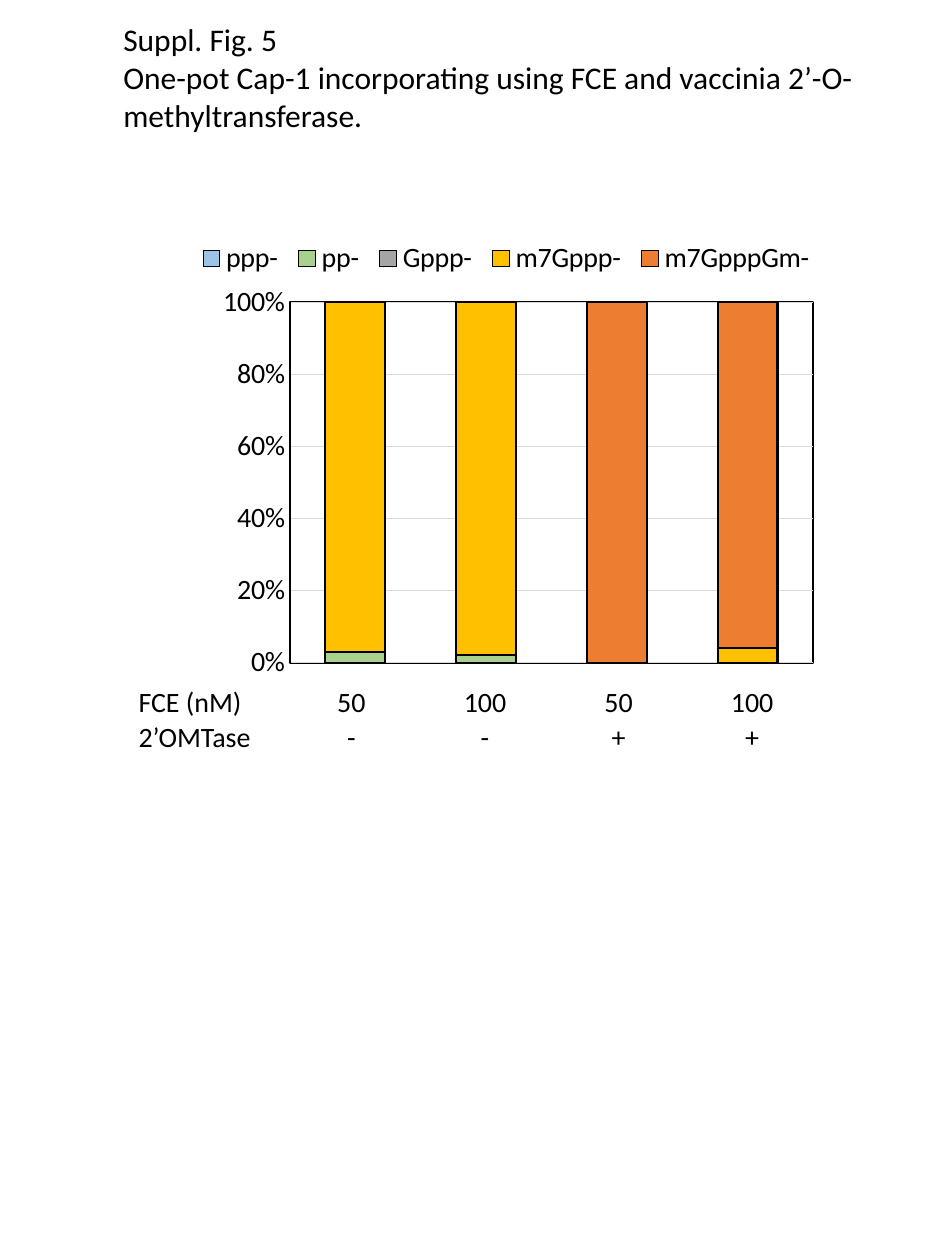
from lxml.etree import SubElement
from pptx import Presentation
from pptx.chart.data import CategoryChartData
from pptx.dml.color import RGBColor
from pptx.enum.chart import XL_CHART_TYPE, XL_LEGEND_POSITION, XL_TICK_MARK
from pptx.enum.text import MSO_ANCHOR, PP_ALIGN
from pptx.oxml import parse_xml
from pptx.oxml.ns import nsdecls, qn
from pptx.util import Inches, Pt

BLACK = RGBColor(0x00, 0x00, 0x00)
GRID = RGBColor(0xD9, 0xD9, 0xD9)
BLUE = RGBColor(0x9D, 0xC3, 0xE6)
GREEN = RGBColor(0xA9, 0xD1, 0x8E)
GRAY = RGBColor(0xA5, 0xA5, 0xA5)
YELLOW = RGBColor(0xFF, 0xC0, 0x00)
ORANGE = RGBColor(0xED, 0x7D, 0x31)
FONT = "Calibri"

SERIES = [
    ("ppp-", (0, 0, 0, 0), BLUE),
    ("pp-", (0.03, 0.02, 0, 0), GREEN),
    ("Gppp-", (0, 0, 0, 0), GRAY),
    ("m7Gppp-", (0.97, 0.98, 0, 0.04), YELLOW),
    ("m7GpppGm-", (0, 0, 1, 0.96), ORANGE),
]
CONDITIONS = [
    ("FCE (nM)", "50", "100", "50", "100"),
    ("2’OMTase", "-", "-", "+", "+"),
]


def style_font(font, size):
    font.name = FONT
    font.size = Pt(size)
    font.color.rgb = BLACK


def style_line(line, color=BLACK, width=1.25):
    line.color.rgb = color
    line.width = Pt(width)


def write(tf, text, size=16, align=PP_ALIGN.LEFT):
    for i, part in enumerate(text.split("\n")):
        p = tf.paragraphs[0] if i == 0 else tf.add_paragraph()
        p.alignment = align
        r = p.add_run()
        r.text = part
        style_font(r.font, size)


def set_layout(parent, index, x, y, w, h, inner=False):
    for old in parent.findall(qn("c:layout")):
        parent.remove(old)
    layout = parse_xml(f"<c:layout {nsdecls('c')}><c:manualLayout/></c:layout>")
    values = [("layoutTarget", "inner")] if inner else []
    values += [("xMode", "edge"), ("yMode", "edge"),
               ("x", x), ("y", y), ("w", w), ("h", h)]
    for tag, value in values:
        SubElement(layout[0], qn(f"c:{tag}")).set("val", str(value))
    parent.insert(index, layout)


def add_title(s, box):
    tf = s.shapes.add_textbox(*box).text_frame
    tf.word_wrap = True
    write(tf, "Suppl. Fig. 5\nOne-pot Cap-1 incorporating using FCE and "
              "vaccinia 2’-O-methyltransferase.", size=18)


def add_cap_chart(s, box):
    data = CategoryChartData(number_format="0%")
    data.categories = ["1", "2", "3", "4"]
    for name, values, _ in SERIES:
        data.add_series(name, values)
    chart = s.shapes.add_chart(XL_CHART_TYPE.COLUMN_STACKED, *box, data).chart
    style_font(chart.font, 16)
    chart.has_title = False

    plot = chart.plots[0]
    plot.gap_width = 120
    plot.overlap = 100
    plot.vary_by_categories = False
    for series, (_, _, color) in zip(plot.series, SERIES):
        series.format.fill.solid()
        series.format.fill.fore_color.rgb = color
        style_line(series.format.line)

    chart.category_axis.visible = False
    axis = chart.value_axis
    axis.minimum_scale, axis.maximum_scale, axis.major_unit = 0, 1, 0.2
    axis.major_tick_mark = XL_TICK_MARK.NONE
    axis.tick_labels.number_format = "0%"
    axis.tick_labels.number_format_is_linked = False
    style_font(axis.tick_labels.font, 16)
    style_line(axis.format.line)
    style_line(axis.major_gridlines.format.line, GRID, 0.75)

    chart.has_legend = True
    legend = chart.legend
    legend.position = XL_LEGEND_POSITION.BOTTOM
    legend.include_in_layout = False
    style_font(legend.font, 16)
    set_layout(legend._element, 1, 0.01, 0.02, 0.97, 0.11)

    area = chart._chartSpace.chart.plotArea
    set_layout(area, 0, 0.161, 0.17, 0.807, 0.786, inner=True)
    area.append(parse_xml(
        f"<c:spPr {nsdecls('c', 'a')}><a:noFill/><a:ln w=\"{Pt(1.25)}\">"
        f"<a:solidFill><a:srgbClr val=\"{BLACK}\"/></a:solidFill></a:ln></c:spPr>"))


def add_conditions(s, box):
    rows, cols = len(CONDITIONS), len(CONDITIONS[0])
    table = s.shapes.add_table(rows, cols, *box).table
    table.first_row = table.horz_banding = False
    label_width = int(box[2] * 0.216)
    for i, column in enumerate(table.columns):
        column.width = label_width if i == 0 else (box[2] - label_width) // (cols - 1)
    for i, values in enumerate(CONDITIONS):
        for j, text in enumerate(values):
            cell = table.cell(i, j)
            cell.fill.background()
            cell.vertical_anchor = MSO_ANCHOR.BOTTOM
            cell.margin_left = cell.margin_right = cell.margin_top = Inches(0.01)
            cell.margin_bottom = 0
            write(cell.text_frame, text,
                  align=PP_ALIGN.CENTER if j else PP_ALIGN.LEFT)


def main():
    prs = Presentation()
    prs.slide_width, prs.slide_height = Inches(7.5), Inches(10)
    s = prs.slides.add_slide(prs.slide_layouts[6])
    add_conditions(s, [Inches(v) for v in (1.09, 5.43, 5.41, 0.55)])
    add_title(s, [Inches(v) for v in (0.88, 0.11, 6.31, 1.01)])
    add_cap_chart(s, [Inches(v) for v in (1.47, 1.78, 5.15, 3.64)])
    prs.save("out.pptx")


if __name__ == "__main__":
    main()
